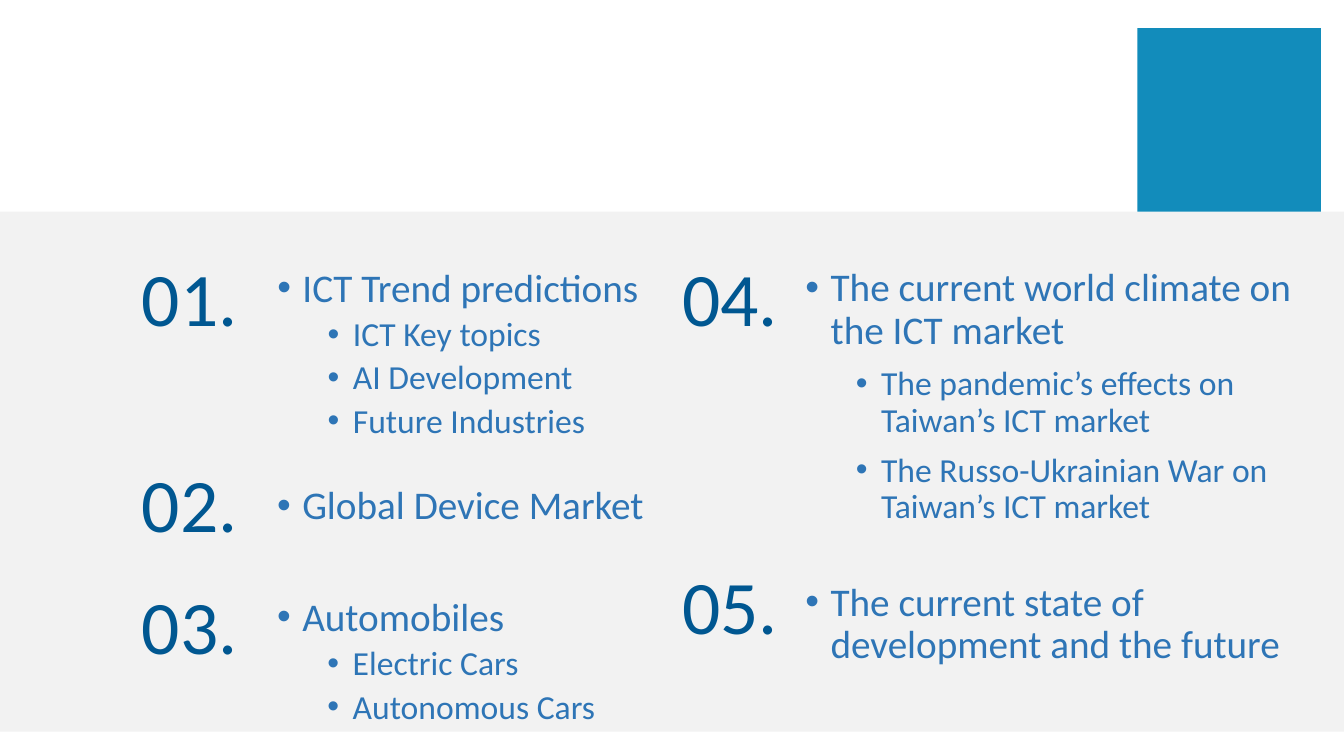
from lxml.etree import SubElement
from pptx import Presentation
from pptx.dml.color import RGBColor
from pptx.enum.shapes import MSO_SHAPE
from pptx.enum.text import MSO_ANCHOR, MSO_AUTO_SIZE, PP_ALIGN
from pptx.oxml.ns import qn
from pptx.util import Inches, Pt

GREY = RGBColor(0xF2, 0xF2, 0xF2)
TEAL = RGBColor(0x12, 0x8C, 0xBB)
NAVY = RGBColor(0x00, 0x57, 0x91)
BLUE = RGBColor(0x2E, 0x75, 0xB6)
FONT = "Calibri"
WIDE, HIGH = 13.33, 7.5
BAND = 2.1
LEFT, RIGHT = (1.31, 2.65), (6.67, 7.89)

TOPICS = [
    (LEFT, 2.44, 2.61, (3.88, 1.87), 5, "ICT Trend predictions",
     ["ICT Key topics", "AI Development", "Future Industries"]),
    (LEFT, 4.48, 4.77, (3.87, 0.53), 5, "Global Device Market", []),
    (LEFT, 5.69, 5.88, (4.74, 1.64), 5, "Automobiles",
     ["Electric Cars", "Autonomous Cars"]),
    (RIGHT, 2.44, 2.61, (5.09, 2.68), 10,
     "The current world climate on the ICT market",
     ["The pandemic’s effects on Taiwan’s ICT market",
      "The Russo-Ukrainian War on Taiwan’s ICT market"]),
    (RIGHT, 5.5, 5.73, (5.44, 0.95), 10,
     "The current state of development and the future", []),
]


def block(slide, box, color):
    """Draw a plain filled rectangle in the box."""
    shape = slide.shapes.add_shape(MSO_SHAPE.RECTANGLE, *map(Inches, box))
    shape.shadow.inherit = False
    shape.fill.solid()
    shape.fill.fore_color.rgb = color
    shape.line.fill.background()


def style(para, size, color):
    """Format the runs of a paragraph."""
    for run in para.runs:
        run.font.name = FONT
        run.font.size = Pt(size)
        run.font.color.rgb = color


def bullet(para, level):
    """Give a paragraph a hanging bullet for its level."""
    para.level = level
    props = para._p.get_or_add_pPr()
    props.set("marL", str(Inches(0.25 + level / 2)))
    props.set("indent", str(Inches(-0.25)))
    SubElement(props, qn("a:buFont"), typeface="Arial")
    SubElement(props, qn("a:buChar"), char="•")


def number(slide, left, top, text):
    """Write a large topic number."""
    box = slide.shapes.add_textbox(*map(Inches, (left, top, 1.23, 1.01)))
    box.text_frame.word_wrap = True
    box.text_frame.text = text
    style(box.text_frame.paragraphs[0], 54, NAVY)


def outline(shape, box, gap, head, subs):
    """Fill a shape with a heading and its sub-topics."""
    shape.left, shape.top, shape.width, shape.height = map(Inches, box)
    frame = shape.text_frame
    frame.text = "\n".join([head, *subs])
    frame.word_wrap = True
    frame.auto_size = MSO_AUTO_SIZE.NONE
    frame.vertical_anchor = MSO_ANCHOR.TOP
    for row, para in enumerate(frame.paragraphs):
        level = min(row, 1)
        para.alignment = PP_ALIGN.LEFT
        para.line_spacing = 0.9
        para.space_before = Pt(gap * level)
        bullet(para, level)
        style(para, 24 if level else 28, BLUE)


def agenda(deck):
    """Build the agenda slide."""
    slide = deck.slides.add_slide(deck.slide_layouts[1])
    title = slide.shapes.title._element
    title.getparent().remove(title)
    body = slide.placeholders[1]
    block(slide, (0, BAND, WIDE, 5.16), GREY)
    block(slide, (11.28, BAND - 1.82, 1.82, 1.82), TEAL)
    slide.shapes._spTree.append(body._element)
    for num, (cols, top, line, size, gap, head, subs) in enumerate(TOPICS, 1):
        number(slide, cols[0], top, f"{num:02}.")
        shape = body if num == 1 else slide.shapes.add_textbox(0, 0, 0, 0)
        outline(shape, (cols[1], line, *size), gap, head, subs)


def main():
    """Create and save the deck."""
    deck = Presentation()
    deck.slide_width, deck.slide_height = Inches(WIDE), Inches(HIGH)
    agenda(deck)
    deck.save("out.pptx")


if __name__ == "__main__":
    main()
